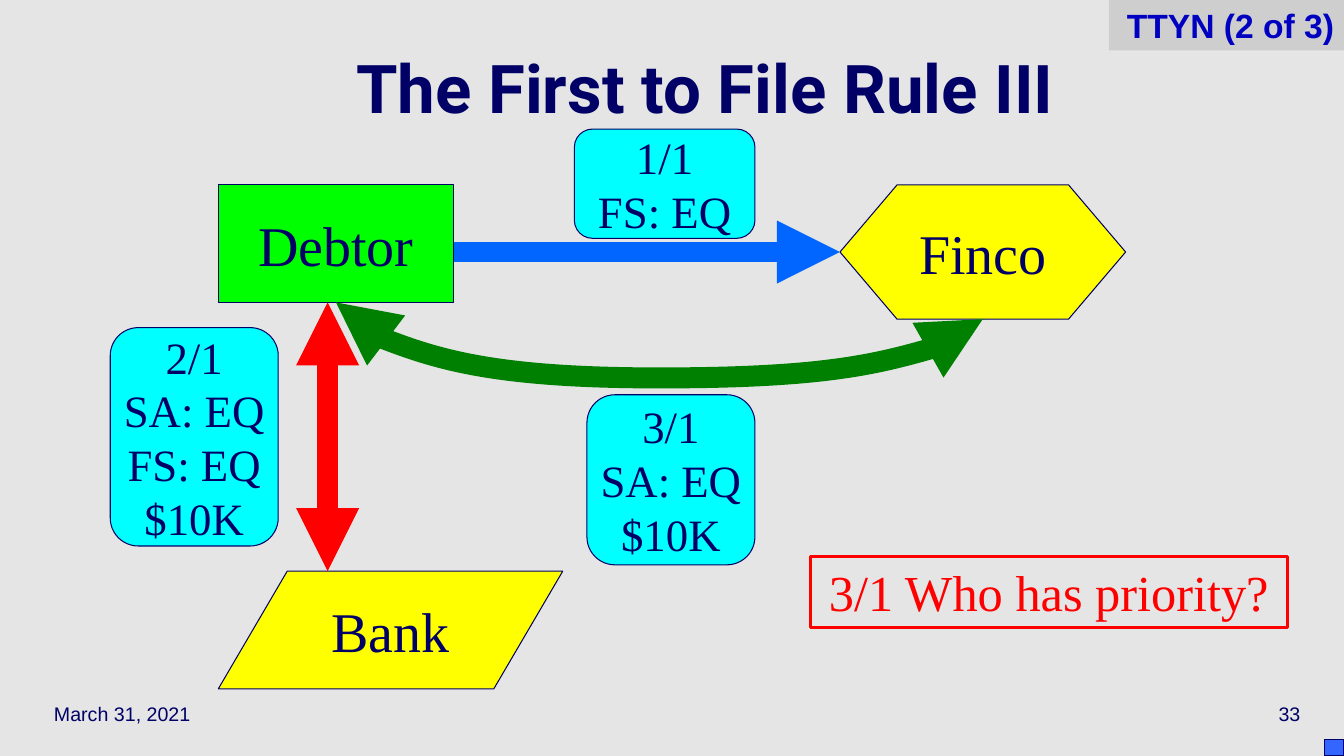
from lxml.etree import SubElement
from pptx import Presentation
from pptx.dml.color import RGBColor
from pptx.enum.shapes import MSO_CONNECTOR as CONN, MSO_SHAPE as SHAPE
from pptx.enum.text import MSO_ANCHOR as ANCHOR, MSO_AUTO_SIZE as AUTO, PP_ALIGN as ALIGN
from pptx.oxml.ns import qn
from pptx.util import Pt

PX = 9525
NAVY = RGBColor(0x00, 0x00, 0x66)
TAG_BLUE = RGBColor(0x00, 0x00, 0xC0)
ARROW_BLUE = RGBColor(0x00, 0x66, 0xFF)
CORNER_BLUE = RGBColor(0x33, 0x66, 0xFF)
RED = RGBColor(0xFF, 0x00, 0x00)
DARK_GREEN = RGBColor(0x00, 0x80, 0x00)
GREEN = RGBColor(0x00, 0xFF, 0x00)
YELLOW = RGBColor(0xFF, 0xFF, 0x00)
CYAN = RGBColor(0x00, 0xFF, 0xFF)
PALE_GRAY = RGBColor(0xE5, 0xE5, 0xE5)
TAG_GRAY = RGBColor(0xCE, 0xCE, 0xCE)
SERIF = "Times New Roman"


def emu(*lengths):
    return [n * PX for n in lengths]


def set_text(sp, lines, size, color=NAVY, font=SERIF, align=ALIGN.CENTER,
             bold=False, anchor=ANCHOR.MIDDLE, wrap=True):
    tf = sp.text_frame
    tf.word_wrap = wrap
    tf.auto_size = AUTO.NONE
    tf.vertical_anchor = anchor
    tf.text = "\n".join(lines)
    for p in tf.paragraphs:
        p.alignment = align
        p.font.name = font
        p.font.size = Pt(size)
        p.font.bold = bold
        p.font.color.rgb = color


def add_title(s, text):
    sp = s.shapes.title
    sp.left, sp.top, sp.width, sp.height = emu(85, 32, 1173, 120)
    set_text(sp, [text], 48, font="Roboto", bold=True)
    sp.text_frame.paragraphs[0].line_spacing = 0.7


def add_footer(s, x, text, align):
    sp = s.shapes.add_textbox(*emu(x, 656, 267, 48))
    set_text(sp, [text], 14, font="Arial", align=align)


def add_box(s, kind, box, fill=None, line=None, line_pt=0.75):
    sp = s.shapes.add_shape(kind, *emu(*box))
    sp.shadow.inherit = False
    if fill is None:
        sp.fill.background()
    else:
        sp.fill.solid()
        sp.fill.fore_color.rgb = fill
    if line is None:
        sp.line.fill.background()
    else:
        sp.line.color.rgb = line
        sp.line.width = Pt(line_pt)
    return sp


def add_party(s, kind, box, fill, name):
    set_text(add_box(s, kind, box, fill, NAVY), [name], 40, wrap=False)


def add_event(s, box, lines):
    sp = add_box(s, SHAPE.FLOWCHART_ALTERNATE_PROCESS, box, CYAN, NAVY)
    set_text(sp, lines, 32, wrap=False)


def add_arrow(s, kind, ends, color, both=False):
    c = s.shapes.add_connector(kind, *emu(*ends))
    c.line.color.rgb = color
    c.line.width = Pt(15)
    ln = c.line._get_or_add_ln()
    if both:
        SubElement(ln, qn("a:headEnd"), type="triangle")
    SubElement(ln, qn("a:tailEnd"), type="triangle")
    SubElement(c._element.spPr, qn("a:effectLst"))
    return c


def add_sagging_arrow(s, x1, y1, x2, y2, sag, color):
    run, rise = x2 - x1, y2 - y1
    left = (x1 + x2 - rise) // 2
    top = (y1 + y2 - run) // 2
    c = add_arrow(s, CONN.CURVE, (left + rise, top, left, top + run), color, both=True)
    c.rotation = 270
    spPr = c._element.spPr
    spPr.find(qn("a:xfrm")).set("rot", str(270 * 60000))
    guides = spPr.find(qn("a:prstGeom")).find(qn("a:avLst"))
    SubElement(guides, qn("a:gd"), name="adj1", fmla=f"val {sag * 100000 // rise}")


def main():
    prs = Presentation()
    prs.slide_width, prs.slide_height = emu(1280, 720)
    s = prs.slides.add_slide(prs.slide_layouts[5])
    s.background.fill.solid()
    s.background.fill.fore_color.rgb = PALE_GRAY

    add_footer(s, 42, "March 31, 2021", ALIGN.LEFT)
    add_footer(s, 981, "33", ALIGN.RIGHT)
    add_title(s, "The First to File Rule III")

    add_party(s, SHAPE.FLOWCHART_DATA, (208, 544, 328, 112), YELLOW, "Bank")
    add_party(s, SHAPE.FLOWCHART_PROCESS, (208, 176, 224, 112), GREEN, "Debtor")
    add_party(s, SHAPE.FLOWCHART_PREPARATION, (800, 176, 272, 128), YELLOW, "Finco")

    question = add_box(s, SHAPE.RECTANGLE, (772, 530, 454, 68), line=RED, line_pt=2)
    set_text(question, ["3/1 Who has priority?"], 36, RED, anchor=ANCHOR.TOP)

    add_arrow(s, CONN.STRAIGHT, (432, 240, 800, 240), ARROW_BLUE)
    add_event(s, (559, 376, 160, 162), ["3/1", "SA: EQ", "$10K"])
    add_event(s, (105, 312, 160, 208), ["2/1", "SA: EQ", "FS: EQ", "$10K"])
    add_event(s, (547, 123, 172, 104), ["1/1", "FS: EQ"])
    add_arrow(s, CONN.STRAIGHT, (312, 288, 312, 544), RED, both=True)
    add_sagging_arrow(s, 320, 288, 936, 304, 72, DARK_GREEN)

    add_box(s, SHAPE.RECTANGLE, (1261, 704, 19, 16), CORNER_BLUE, NAVY)
    tag = add_box(s, SHAPE.RECTANGLE, (1056, 0, 224, 48), TAG_GRAY)
    set_text(tag, ["TTYN (2 of 3)"], 24, TAG_BLUE, "Arial", ALIGN.RIGHT,
             bold=True, anchor=ANCHOR.TOP)

    prs.save("out.pptx")


if __name__ == "__main__":
    main()
